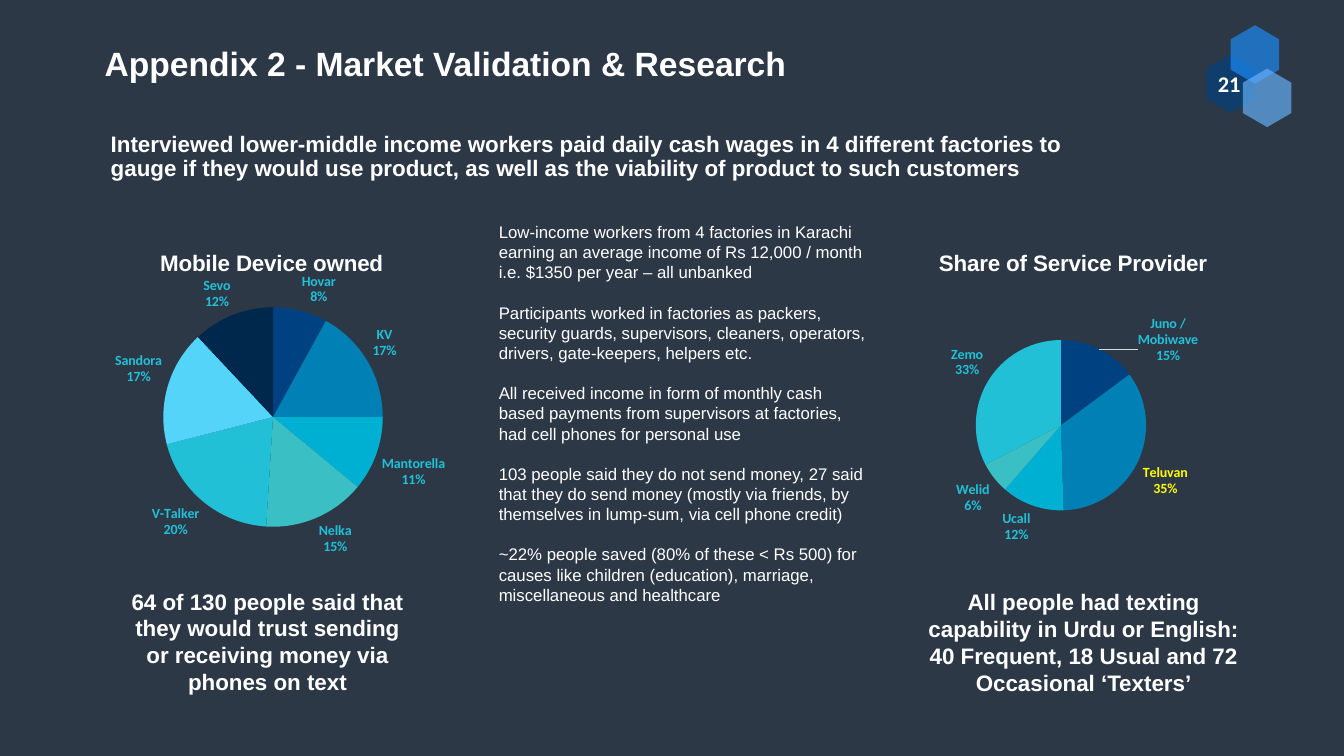
from lxml import etree
from pptx import Presentation
from pptx.chart.data import CategoryChartData
from pptx.dml.color import RGBColor
from pptx.enum.chart import XL_CHART_TYPE, XL_LABEL_POSITION
from pptx.enum.shapes import MSO_SHAPE
from pptx.enum.text import MSO_ANCHOR, PP_ALIGN
from pptx.oxml import parse_xml
from pptx.oxml.ns import nsdecls, qn
from pptx.util import Pt

COLORS = {
    "background": "2D3847", "text": "FFFFFF", "label": "21C0D7",
    "highlight": "FFFF00", "leader": "D9D9D9",
    "hexagon_dark": "004281", "hexagon_mid": "1A8FFF", "hexagon_light": "67B5FF",
}
SLICES = ["004281", "0080B4", "00B0D3", "3ABFC4", "21C0D7", "55D4FA", "00284D"]

DEVICES = {"Hovar": 8, "KV": 17, "Mantorella": 11, "Nelka": 15,
           "V-Talker": 20, "Sandora": 17, "Sevo": 12}
PROVIDERS = {"Juno / Mobiwave": 15, "Teluvan": 35, "Ucall": 12, "Welid": 6, "Zemo": 33}

FINDINGS = [
    "Low-income workers from 4 factories in Karachi earning an average income of "
    "Rs 12,000 / month i.e. $1350 per year – all unbanked",
    "Participants worked in factories as packers, security guards, supervisors, "
    "cleaners, operators, drivers, gate-keepers, helpers etc.",
    "All received income in form of monthly cash based payments from supervisors "
    "at factories, had cell phones for personal use",
    "103 people said they do not send money, 27 said that they do send money "
    "(mostly via friends, by themselves in lump-sum, via cell phone credit)",
    "~22% people saved (80% of these < Rs 500) for causes like children "
    "(education), marriage, miscellaneous and healthcare",
]


def color(name):
    return RGBColor.from_string(COLORS[name])


def style_font(font, size, color_name="text", bold=True, name="Arial"):
    font.name, font.size, font.bold = name, Pt(size), bold
    font.color.rgb = color(color_name)


def add_text(slide, box, paragraphs, size, bold=True, name="Arial",
             align=PP_ALIGN.LEFT, anchor=MSO_ANCHOR.TOP, spacing=1.2, gap=0):
    shape = slide.shapes.add_textbox(*map(Pt, box))
    text_frame = shape.text_frame
    text_frame.word_wrap = True
    text_frame.vertical_anchor = anchor
    text_frame.text = "\n".join(paragraphs)
    for paragraph in text_frame.paragraphs:
        paragraph.alignment = align
        paragraph.line_spacing = Pt(size * spacing)
        paragraph.space_after = Pt(gap)
        for run in paragraph.runs:
            style_font(run.font, size, bold=bold, name=name)


def add_page_badge(slide, box, number):
    left, top = box
    hexagons = [("hexagon_dark", 2.2, 20.9), ("hexagon_mid", 19.4, 0), ("hexagon_light", 28.1, 31)]
    for color_name, dx, dy in hexagons:
        shape = slide.shapes.add_shape(
            MSO_SHAPE.HEXAGON, Pt(left + dx), Pt(top + dy), Pt(41.8), Pt(34.6))
        shape.rotation = 270
        shape.adjustments[0] = 0.29
        shape.shadow.inherit = False
        shape.fill.solid()
        shape.fill.fore_color.rgb = color(color_name)
        shape.line.fill.background()
        fill_color = shape.fill._xPr.find(".//" + qn("a:srgbClr"))
        etree.SubElement(fill_color, qn("a:alpha"), val="65000")
    add_text(slide, (left, top + 25.2, 43.9, 26.6), [number], 16,
             name="Calibri", align=PP_ALIGN.CENTER)


def set_layout(parent, index, values):
    for layout in parent.findall(qn("c:layout")):
        parent.remove(layout)
    children = "".join(f'<c:{tag} val="{value}"/>' for tag, value in values.items())
    parent.insert(index, parse_xml(
        f'<c:layout {nsdecls("c")}><c:manualLayout>{children}</c:manualLayout></c:layout>'))


def style_labels(labels, color_name):
    style_font(labels.font, 10, color_name, name="Calibri")
    labels.position = XL_LABEL_POSITION.OUTSIDE_END


def add_pie(slide, box, title, shares, title_left, plot, point_labels):
    data = CategoryChartData()
    data.categories = list(shares)
    data.add_series("Series 1", list(shares.values()))
    chart = slide.shapes.add_chart(XL_CHART_TYPE.PIE, *map(Pt, box), data).chart
    chart.has_legend = False
    chart.font.name, chart.font.size = "Calibri", Pt(10)
    chart.has_title = True
    chart.chart_title.text_frame.text = title
    style_font(chart.chart_title.text_frame.paragraphs[0].runs[0].font, 16)

    chart.plots[0].vary_by_categories = True
    series = chart.plots[0].series[0]
    for index in range(len(shares)):
        fill = series.points[index].format.fill
        fill.solid()
        fill.fore_color.rgb = RGBColor.from_string(SLICES[index])

    labels = series.data_labels
    style_labels(labels, "label")
    for index, color_name in point_labels.items():
        style_labels(series.points[index].data_label, color_name)

    root = chart.element
    for holder in root.xpath(".//c:ser/c:dLbls | .//c:ser/c:dLbls/c:dLbl"):
        for tag, value in (("showVal", "0"), ("showCatName", "1"), ("showPercent", "1")):
            holder.find(qn("c:" + tag)).set("val", value)
        separator = parse_xml(f'<c:separator {nsdecls("c")}>\n</c:separator>')
        holder.find(qn("c:showBubbleSize")).addnext(separator)
    all_labels = root.xpath(".//c:ser/c:dLbls")[0]
    if all_labels.find(qn("c:showLeaderLines")) is None:
        etree.SubElement(all_labels, qn("c:showLeaderLines"))
    all_labels.find(qn("c:showLeaderLines")).set("val", "1")
    all_labels.append(parse_xml(
        f'<c:leaderLines {nsdecls("c", "a")}><c:spPr><a:ln w="9525"><a:solidFill>'
        f'<a:srgbClr val="{COLORS["leader"]}"/></a:solidFill></a:ln></c:spPr></c:leaderLines>'))

    set_layout(root.xpath(".//c:chart/c:title")[0], 1,
               {"xMode": "edge", "yMode": "edge", "x": title_left, "y": 0.05})
    x, y, width, height = plot
    set_layout(root.xpath(".//c:plotArea")[0], 0,
               {"layoutTarget": "inner", "xMode": "edge", "yMode": "edge",
                "x": x, "y": y, "w": width, "h": height})
    for label in root.xpath('.//c:dLbl[c:idx/@val="0"]'):
        set_layout(label, 1, {"x": 0.08, "y": 0.06})


def build_research_slide(presentation):
    slide = presentation.slides.add_slide(presentation.slide_layouts[6])
    slide.background.fill.solid()
    slide.background.fill.fore_color.rgb = color("background")
    add_page_badge(slide, (856.1, 21.6), "21")
    add_text(slide, (67.7, 30.2, 771, 52.6),
             ["Appendix 2 - Market Validation & Research"], 24, spacing=1.08)
    add_text(slide, (72, 103, 738, 18.7),
             ["Interviewed lower-middle income workers paid daily cash wages in 4 different "
              "factories to gauge if they would use product, as well as the viability of "
              "product to such customers"], 16, anchor=MSO_ANCHOR.MIDDLE, spacing=1.08)
    add_text(slide, (349.2, 154.8, 276.5, 383.8), FINDINGS, 12, bold=False, gap=14.4)
    add_pie(slide, (48.2, 163.4, 288, 234), "Mobile Device owned", DEVICES,
            0.22, (0.17, 0.24, 0.68, 0.67), {})
    add_pie(slide, (603.4, 163.4, 321.8, 234), "Share of Service Provider", PROVIDERS,
            0.2, (0.29, 0.34, 0.38, 0.52), {0: "label", 1: "highlight"})
    add_text(slide, (80.6, 416.2, 221, 104.4),
             ["64 of 130 people said that they would trust sending or receiving money "
              "via phones on text"], 16, align=PP_ALIGN.CENTER)
    add_text(slide, (650.2, 416.9, 247.7, 104.4),
             ["All people had texting capability in Urdu or English: 40 Frequent, "
              "18 Usual and 72 Occasional ‘Texters’"], 16, align=PP_ALIGN.CENTER)


def main():
    presentation = Presentation()
    presentation.slide_width, presentation.slide_height = Pt(960), Pt(540)
    build_research_slide(presentation)
    presentation.save("out.pptx")


if __name__ == "__main__":
    main()
